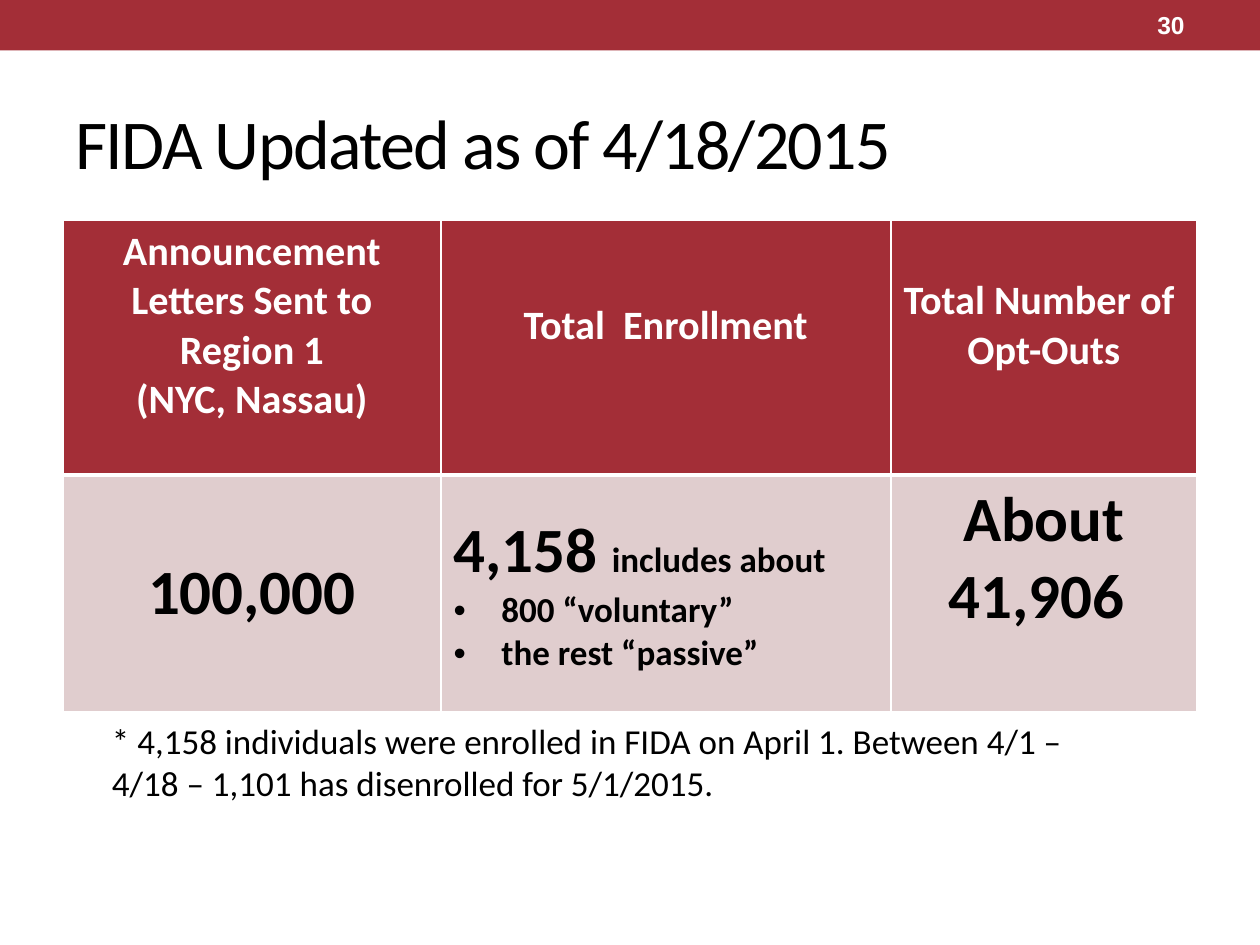
from lxml.etree import SubElement
from pptx import Presentation
from pptx.dml.color import RGBColor
from pptx.enum.shapes import MSO_SHAPE
from pptx.enum.text import MSO_ANCHOR, PP_ALIGN
from pptx.oxml.ns import qn
from pptx.util import Inches, Pt

RED, PINK, WHITE, BLACK = "A32E37", "E0CDCE", "FFFFFF", "000000"


def rgb(value):
    return RGBColor.from_string(value)


def add_text(paragraph, text, size=20, color=BLACK, bold=False, font="Calibri",
             align=PP_ALIGN.LEFT, spacing=None):
    """Append a formatted run to the paragraph."""
    paragraph.alignment = align
    run = paragraph.add_run()
    run.text = text
    run.font.size = Pt(size)
    run.font.name = font
    run.font.bold = bold
    run.font.color.rgb = rgb(color)
    if spacing is not None:
        run.font._element.set("spc", str(int(spacing * 100)))


def add_bullet(paragraph, indent):
    properties = paragraph._p.get_or_add_pPr()
    properties.set("marL", str(indent))
    properties.set("indent", str(-indent))
    SubElement(properties, qn("a:buFont"), typeface="Arial")
    SubElement(properties, qn("a:buChar"), char="•")


def set_borders(cell, bottom_width):
    properties = cell._tc.get_or_add_tcPr()
    for side, width in (("L", 1), ("R", 1), ("T", 1), ("B", bottom_width)):
        line = SubElement(properties, qn(f"a:ln{side}"), w=str(Pt(width)))
        fill = SubElement(line, qn("a:solidFill"))
        SubElement(fill, qn("a:srgbClr"), val=WHITE)


def add_text_box(slide, box, text, anchor=MSO_ANCHOR.TOP, **text_format):
    frame = slide.shapes.add_textbox(*map(Inches, box)).text_frame
    frame.word_wrap = True
    frame.vertical_anchor = anchor
    add_text(frame.paragraphs[0], text, **text_format)


def add_top_bar(slide, box, page_number):
    left, top, width, height = box
    bar = slide.shapes.add_shape(MSO_SHAPE.RECTANGLE, *map(Inches, box))
    bar.shadow.inherit = False
    bar.fill.solid()
    bar.fill.fore_color.rgb = rgb(RED)
    bar.line.fill.background()
    number_box = (left + width - 1.67, top + 0.02, 1.17, height - 0.04)
    add_text_box(slide, number_box, page_number, anchor=MSO_ANCHOR.MIDDLE, size=14,
                 color=WHITE, bold=True, font="Arial", align=PP_ALIGN.RIGHT)


def place_title(slide, box, text):
    title = slide.shapes.title
    title.left, title.top, title.width, title.height = map(Inches, box)
    title.text_frame.vertical_anchor = MSO_ANCHOR.MIDDLE
    add_text(title.text_frame.paragraphs[0], text, size=40, spacing=-1)


def fill_cell(cell, lines, fill, bottom_border=1, bottom_margin=0.05, **text_format):
    set_borders(cell, bottom_border)
    cell.fill.solid()
    cell.fill.fore_color.rgb = rgb(fill)
    cell.vertical_anchor = MSO_ANCHOR.MIDDLE
    cell.margin_bottom = Inches(bottom_margin)
    frame = cell.text_frame
    for index, line in enumerate(lines):
        paragraph = frame.add_paragraph() if index else frame.paragraphs[0]
        add_text(paragraph, line, bold=True, **text_format)


def add_enrollment_table(slide, box):
    table = slide.shapes.add_table(2, 3, *map(Inches, box)).table
    for column, width in zip(table.columns, (3, 3.57, 2.43)):
        column.width = Inches(width)
    for row, height in zip(table.rows, (2.02, 1.88)):
        row.height = Inches(height)

    # Header row
    headers = (
        ["Announcement Letters Sent to Region 1", "(NYC, Nassau)"],
        ["Total  Enrollment"],
        ["Total Number of ", "Opt-Outs"],
    )
    for column, lines in enumerate(headers):
        fill_cell(table.cell(0, column), lines, RED, bottom_border=3, bottom_margin=0.4,
                  size=23, color=WHITE, align=PP_ALIGN.CENTER)

    # Letters sent and opt-outs
    fill_cell(table.cell(1, 0), ["100,000"], PINK, size=36, align=PP_ALIGN.CENTER)
    fill_cell(table.cell(1, 2), ["About", "41,906 "], PINK, bottom_margin=0.6,
              size=36, align=PP_ALIGN.CENTER)

    # Enrollment with its breakdown
    enrollment = table.cell(1, 1)
    fill_cell(enrollment, ["4,158 "], PINK, size=36)
    add_text(enrollment.text_frame.paragraphs[0], "includes about", bold=True)
    for item in ("800 “voluntary”", "the rest “passive”"):
        paragraph = enrollment.text_frame.add_paragraph()
        add_bullet(paragraph, Inches(0.38))
        add_text(paragraph, item, bold=True)


def main():
    presentation = Presentation()
    presentation.slide_width = Inches(10)
    presentation.slide_height = Inches(7.5)
    slide = presentation.slides.add_slide(presentation.slide_layouts[5])

    add_top_bar(slide, (0, 0, 10, 0.4), "30")
    place_title(slide, (0.5, 0.58, 9, 1.08), "FIDA Updated as of 4/18/2015")
    add_enrollment_table(slide, (0.5, 1.75, 9, 3.9))
    add_text_box(slide, (0.79, 5.66, 8.31, 0.77),
                 "* 4,158 individuals were enrolled in FIDA on April 1. "
                 "Between 4/1 – 4/18 – 1,101 has disenrolled for 5/1/2015.")
    presentation.save("out.pptx")


if __name__ == "__main__":
    main()
